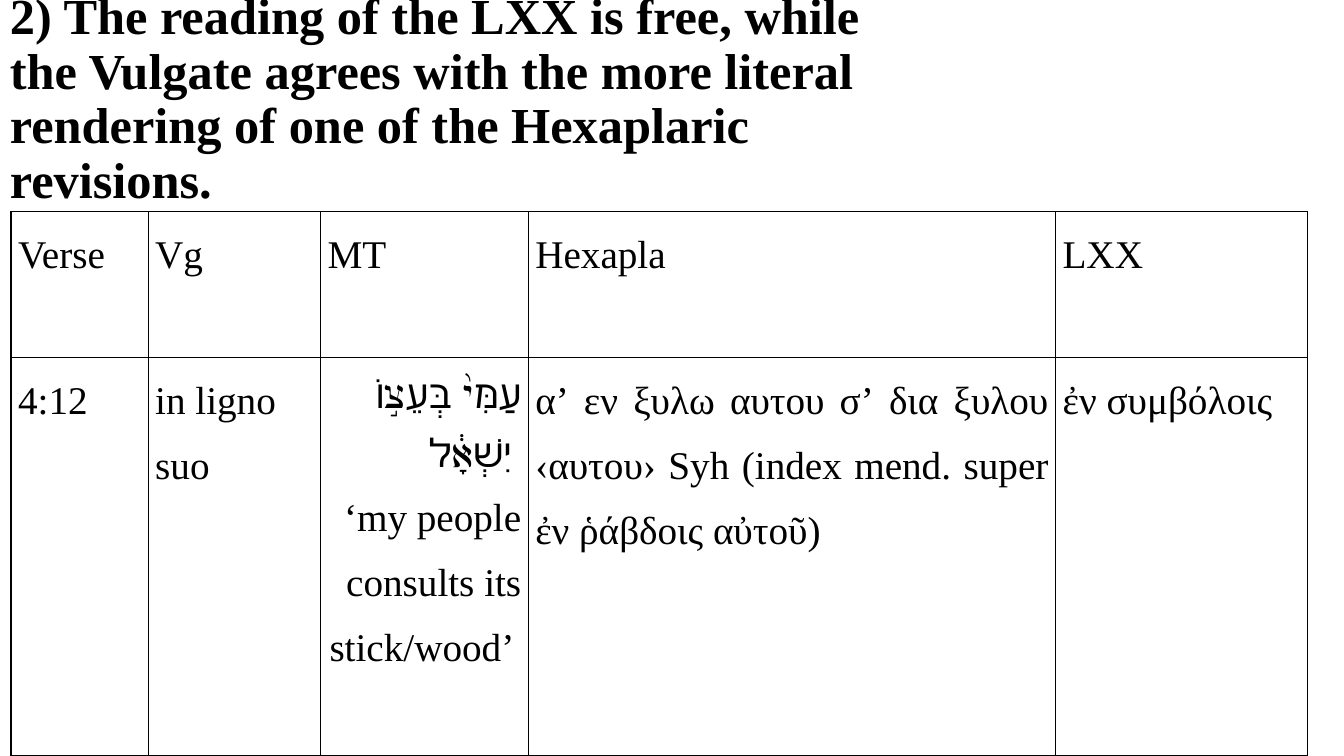
"""Build a slide comparing the Vulgate, MT, Hexapla and LXX readings of one verse."""
from lxml.etree import SubElement
from pptx import Presentation
from pptx.dml.color import RGBColor
from pptx.enum.text import MSO_ANCHOR, MSO_AUTO_SIZE, PP_ALIGN as AL
from pptx.oxml.ns import qn
from pptx.util import Inches, Pt


def style(p, size, spacing, bold=False, color="000000"):
    p.line_spacing = spacing
    p.font.name = "Times New Roman"
    p.font.size = Pt(size)
    p.font.bold = bold
    p.font.color.rgb = RGBColor.from_string(color)


def add_borders(cell, color="000000"):
    tcPr = cell._tc.get_or_add_tcPr()
    for side in ("lnL", "lnR", "lnT", "lnB"):
        ln = SubElement(tcPr, qn(f"a:{side}"), w=str(Pt(1)))
        SubElement(SubElement(ln, qn("a:solidFill")), qn("a:srgbClr"), val=color)


prs = Presentation()
prs.slide_width, prs.slide_height = Inches(13.33), Inches(7.5)
s = prs.slides.add_slide(prs.slide_layouts[6])

title = s.shapes.add_textbox(Inches(0), Inches(0), Inches(9.4), Inches(1.99))
tf = title.text_frame
tf.word_wrap = True
tf.auto_size = MSO_AUTO_SIZE.NONE
tf.vertical_anchor = MSO_ANCHOR.MIDDLE
tf.text = ("2) The reading of the LXX is free, while the Vulgate agrees with the more "
           "literal rendering of one of the Hexaplaric revisions.")
style(tf.paragraphs[0], 36, 0.9, bold=True)

widths = [1.36, 1.71, 2.06, 5.23, 2.5]
heights = [1.45, 3.95]
rows = [
    [("Verse", AL.JUSTIFY), ("Vg", AL.JUSTIFY), ("MT", AL.JUSTIFY),
     ("Hexapla", AL.JUSTIFY), ("LXX", AL.JUSTIFY)],
    [("4:12", AL.JUSTIFY),
     ("in ligno suo", AL.LEFT),
     ("  עַמִּי֙ בְּעֵצ֣וֹ יִשְׁאָ֔ל \n‘my people consults its stick/wood’ ", AL.RIGHT),
     ("αʼ εν ξυλω αυτου σʼ δια ξυλου ‹αυτου› Syh (index mend. super "
      "ἐν ῥάβδοις αὐτοῦ)", AL.JUSTIFY),
     ("ἐν συμβόλοις", AL.LEFT)],
]

table = s.shapes.add_table(len(rows), len(widths), Inches(0.11), Inches(2.1),
                           Inches(sum(widths)), Inches(sum(heights))).table
table.first_row = table.horz_banding = False
for column, width in zip(table.columns, widths):
    column.width = Inches(width)
for row, height, readings in zip(table.rows, heights, rows):
    row.height = Inches(height)
    for cell, (text, align) in zip(row.cells, readings):
        cell.margin_left = cell.margin_right = Inches(0.07)
        cell.margin_top = cell.margin_bottom = Inches(0)
        cell.text = text
        for p in cell.text_frame.paragraphs:
            p.alignment = align
            style(p, 28, 1.5)
        add_borders(cell)
        cell.fill.background()

prs.save("out.pptx")
